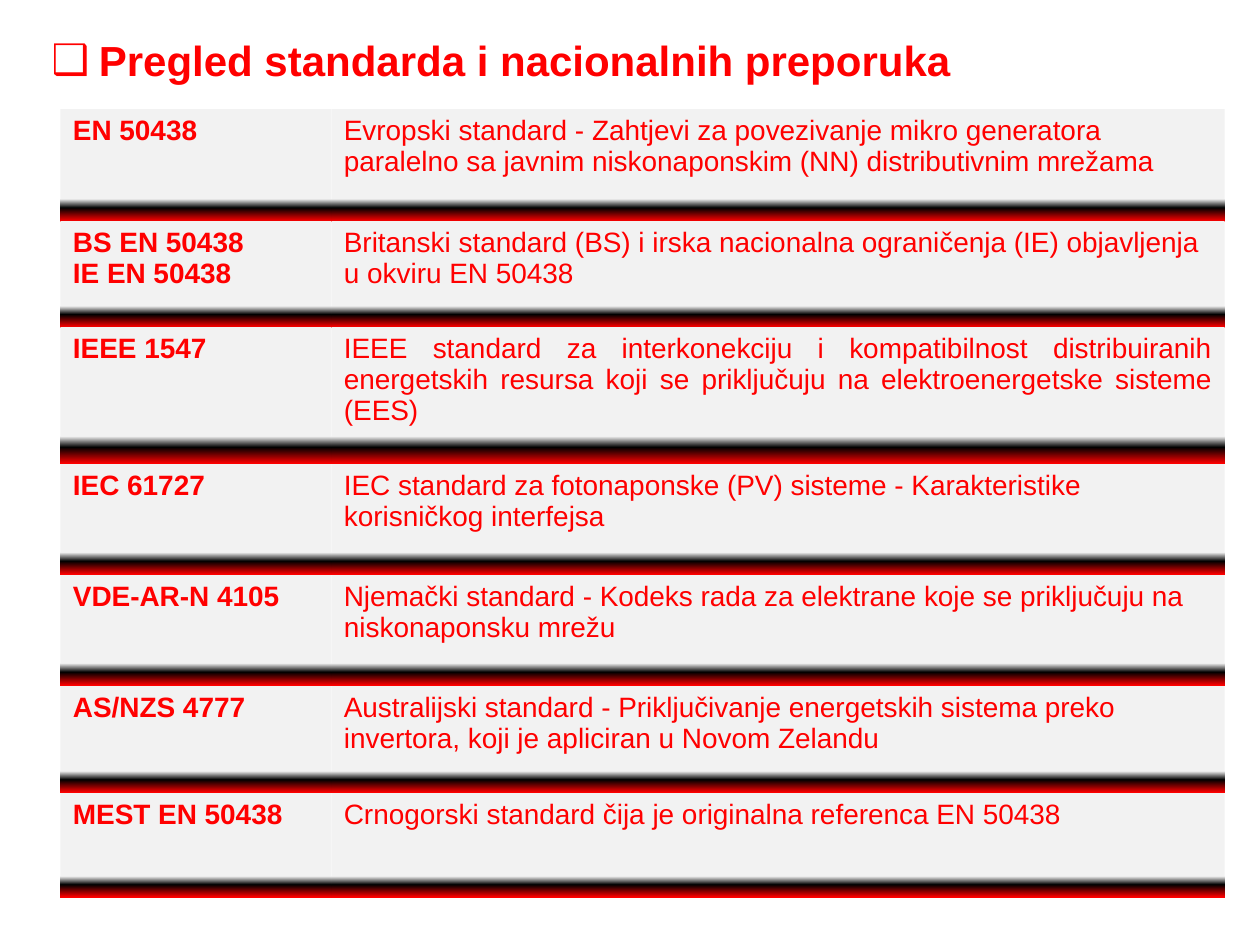
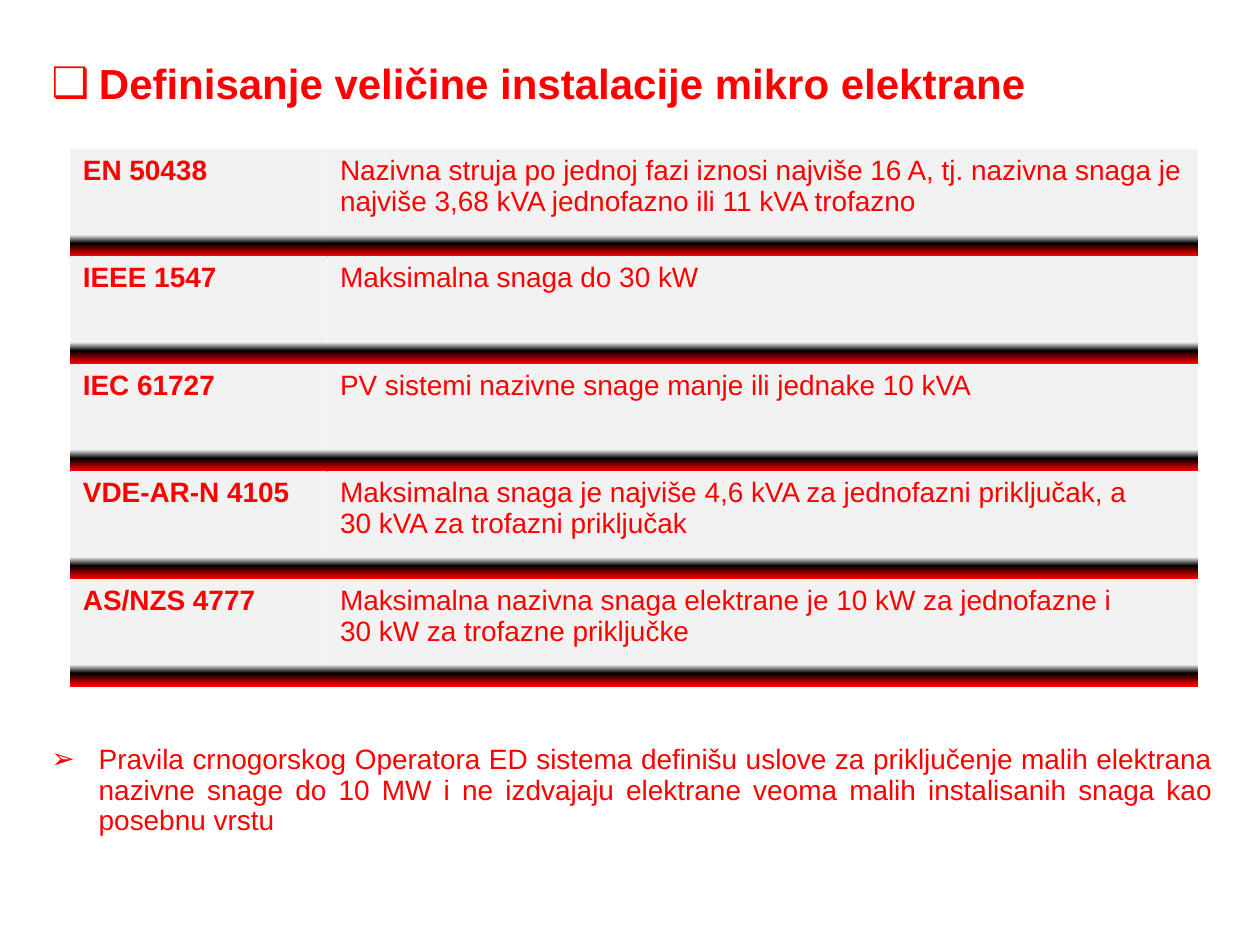
from dataclasses import dataclass

from lxml import etree
from pptx import Presentation
from pptx.dml.color import RGBColor
from pptx.enum.text import MSO_ANCHOR, MSO_AUTO_SIZE, PP_ALIGN
from pptx.oxml.ns import qn
from pptx.util import Pt

JUSTIFY, LEFT = PP_ALIGN.JUSTIFY, PP_ALIGN.LEFT
TOP, NO_AUTOFIT = MSO_ANCHOR.TOP, MSO_AUTO_SIZE.NONE
TITLE_ONLY = 5
PLAIN_TABLE = "{2D5ABB26-0587-4C30-8999-92F81FD0307C}"


@dataclass(frozen=True)
class Theme:
    font: str = "Arial"
    red: str = "FF0000"
    grey: str = "F2F2F2"
    black: str = "000000"
    title_size: int = 24
    body_size: int = 16
    left: float = 22.3
    width: float = 677.5
    indent: int = 27
    line_spacing: float = 0.9


T = Theme()
# Row background: grey, then a black-to-red band along the bottom
BAND_STOPS = ((2, T.grey), (80, T.grey), (88, T.black), (100, T.red))

STANDARDS = [
    ("EN 50438", "Evropski standard - Zahtjevi za povezivanje mikro generatora "
     "paralelno sa javnim niskonaponskim (NN) distributivnim mrežama"),
    ("BS EN 50438\nIE EN 50438", "Britanski standard (BS) i irska nacionalna "
     "ograničenja (IE) objavljenja u okviru EN 50438"),
    ("IEEE 1547", "IEEE standard za interkonekciju i kompatibilnost distribuiranih "
     "energetskih resursa koji se priključuju na elektroenergetske sisteme (EES)"),
    ("IEC 61727", "IEC standard za fotonaponske (PV) sisteme - Karakteristike "
     "korisničkog interfejsa"),
    ("VDE-AR-N 4105", "Njemački standard - Kodeks rada za elektrane koje se "
     "priključuju na niskonaponsku mrežu"),
    ("AS/NZS 4777", "Australijski standard - Priključivanje energetskih sistema "
     "preko invertora, koji je apliciran u Novom Zelandu"),
    ("MEST EN 50438", "Crnogorski standard čija je originalna referenca EN 50438"),
]
STANDARD_HEIGHTS = [64.1, 60.5, 78, 63.4, 63.4, 61.2, 59.8]

POWER_LIMITS = [
    ("EN 50438", "Nazivna struja po jednoj fazi iznosi najviše 16 A, tj. nazivna "
     "snaga je najviše 3,68 kVA jednofazno ili 11 kVA trofazno"),
    ("IEEE 1547", "Maksimalna snaga do 30 kW"),
    ("IEC 61727", "PV sistemi nazivne snage manje ili jednake 10 kVA"),
    ("VDE-AR-N 4105", "Maksimalna snaga je najviše 4,6 kVA za jednofazni "
     "priključak, a\v30 kVA za trofazni priključak"),
    ("AS/NZS 4777", "Maksimalna nazivna snaga elektrane je 10 kW za jednofazne i"
     "\v30 kW za trofazne priključke"),
]
POWER_HEIGHTS = [61.4] * len(POWER_LIMITS)

RULES_NOTE = ("Pravila crnogorskog Operatora ED sistema definišu uslove za "
              "priključenje malih elektrana nazivne snage do 10 MW i ne izdvajaju "
              "elektrane veoma malih instalisanih snaga kao posebnu vrstu")


def format_text(tf, size, bold, align):
    """Give every run and line break of a text frame the theme's type style."""
    style = {"name": T.font, "size": Pt(size), "bold": bold}
    for p in tf.paragraphs:
        p.alignment = align
        for r in p.runs:
            for name, value in style.items():
                setattr(r.font, name, value)
            r.font.color.rgb = RGBColor.from_string(T.red)
        for br in p._p.findall(qn("a:br")):
            etree.SubElement(br, qn("a:rPr"), sz=str(size * 100))


def fill_bulleted(s, text, top, height, bullet, size, bold):
    """Place a title or text box as one justified paragraph with a hanging bullet."""
    box = {"left": T.left, "top": top, "width": T.width, "height": height}
    for name, value in box.items():
        setattr(s, name, Pt(value))
    tf = s.text_frame
    frame = {"word_wrap": True, "auto_size": NO_AUTOFIT, "vertical_anchor": TOP}
    for name, value in frame.items():
        setattr(tf, name, value)
    tf.text = text
    p = tf.paragraphs[0]
    pPr = p._p.get_or_add_pPr()
    pPr.set("marL", str(Pt(T.indent)))
    pPr.set("indent", str(-Pt(T.indent)))
    etree.SubElement(pPr, qn("a:buFont"), typeface=T.font)
    etree.SubElement(pPr, qn("a:buChar"), char=bullet)
    p.line_spacing = T.line_spacing
    format_text(tf, size, bold, JUSTIFY)


def add_titled_slide(prs, title, top):
    slide = prs.slides.add_slide(prs.slide_layouts[TITLE_ONLY])
    fill_bulleted(slide.shapes.title, title, top, 36, "❑", T.title_size, True)
    return slide


def add_note(slide, text, top):
    s = slide.shapes.add_textbox(0, 0, 0, 0)
    fill_bulleted(s, text, top, 62, "➢", T.body_size, False)


def fill_band(cell):
    grad = etree.SubElement(cell._tc.get_or_add_tcPr(), qn("a:gradFill"))
    stops = etree.SubElement(grad, qn("a:gsLst"))
    for percent, color in BAND_STOPS:
        stop = etree.SubElement(stops, qn("a:gs"), pos=str(percent * 1000))
        etree.SubElement(stop, qn("a:srgbClr"), val=color)
    etree.SubElement(grad, qn("a:lin"), ang="5400000", scaled="0")


def add_standards_table(slide, rows, left, top, widths, heights, justified=()):
    """Add a two-column table: bold standard name, then its description."""
    s = slide.shapes.add_table(len(rows), len(widths), Pt(left), Pt(top),
                               Pt(sum(widths)), Pt(sum(heights)))
    table = s.table
    table.first_row = table.horz_banding = False
    table._tbl.tblPr.find(qn("a:tableStyleId")).text = PLAIN_TABLE
    for column, width in zip(table.columns, widths):
        column.width = Pt(width)
    for i, (row, height) in enumerate(zip(rows, heights)):
        table.rows[i].height = Pt(height)
        for j, text in enumerate(row):
            cell = table.cell(i, j)
            cell.text_frame.text = text
            align = JUSTIFY if (i, j) in justified else LEFT
            format_text(cell.text_frame, T.body_size, j == 0, align)
            fill_band(cell)


def main():
    prs = Presentation()
    prs.slide_width, prs.slide_height = Pt(720), Pt(540)

    # Overview of standards
    slide = add_titled_slide(prs, "Pregled standarda i nacionalnih preporuka", 19.4)
    add_standards_table(slide, STANDARDS, 34.5, 62.4, (154.8, 510.5),
                        STANDARD_HEIGHTS, justified={(2, 1)})

    # Size limits of micro power plants
    slide = add_titled_slide(
        prs, "Definisanje veličine instalacije mikro elektrane", 32.4)
    add_standards_table(slide, POWER_LIMITS, 40.2, 85, (146.9, 497.5),
                        POWER_HEIGHTS, justified={(1, 1)})
    add_note(slide, RULES_NOTE, 422.6)

    prs.save("out.pptx")


if __name__ == "__main__":
    main()
